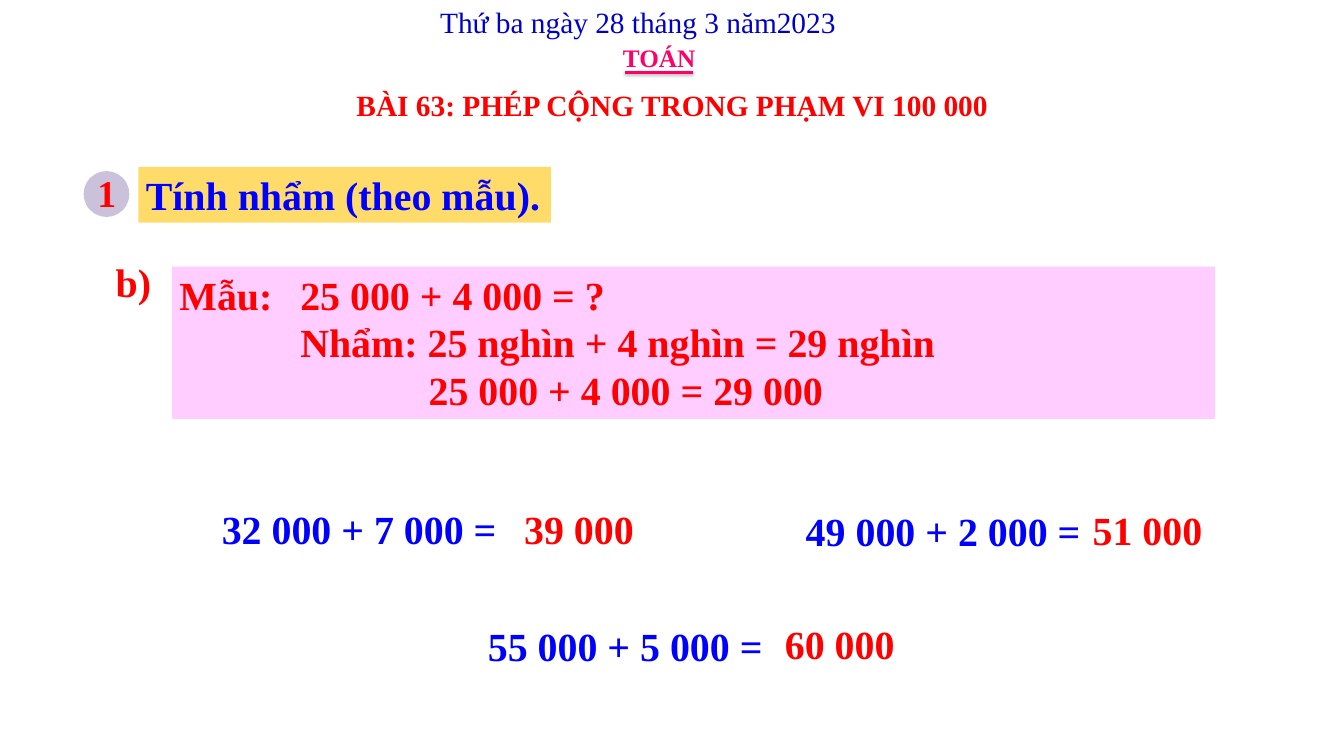
from lxml import etree
from pptx import Presentation
from pptx.dml.color import RGBColor
from pptx.enum.shapes import MSO_CONNECTOR, MSO_SHAPE
from pptx.enum.text import MSO_ANCHOR, MSO_AUTO_SIZE, PP_ALIGN
from pptx.oxml import parse_xml
from pptx.oxml.ns import nsdecls, qn
from pptx.util import Inches, Pt

# Content; places are left, top, width, height in percent of the slide
FONT = "Times New Roman"
RED, BLUE, NAVY, PINK = "FF0000", "0000FF", "0000CC", "FF0066"
LILAC, YELLOW, ROSE = "CCC1DA", "FFDB69", "FFCDFF"

TITLE = "BÀI 63: PHÉP CỘNG TRONG PHẠM VI 100 000"
EXAMPLE = [
    "Mẫu:\t25 000 + 4 000 = ?",
    "\tNhẩm: 25 nghìn + 4 nghìn = 29 nghìn",
    "\t\t25 000 + 4 000 = 29 000",
]
EXAMPLE_TABS = (1.6, 3.3)
# sum, its left and top, answer, its left, top and width
SUMS = [
    ("32 000 + 7 000 =", 15.95, 66.4, "39 000", 38.1, 66.1, 12.9),
    ("49 000 + 2 000 =", 59.4, 66.6, "51 000", 80.4, 66.2, 10.35),
    ("55 000 + 5 000 =", 35.75, 81.9, "60 000", 57.5, 81.3, 10.9),
]
SUM_W, SUM_H, ANSWER_H = 21.75, 7.4, 8
WIDE_INSET = (0.16, 0.08)

prs = Presentation()
prs.slide_width, prs.slide_height = Inches(17.8), Inches(10)
s = prs.slides.add_slide(prs.slide_layouts[5])


def rgb(color):
    return RGBColor.from_string(color)


def place(left, top, width, height):
    w, h = prs.slide_width / 100, prs.slide_height / 100
    return [int(v) for v in (left * w, top * h, width * w, height * h)]


def write(sp, lines, size, color, bold=True, wrap=False,
          inset=(0.1, 0.05), align=PP_ALIGN.LEFT, tabs=()):
    tf = sp.text_frame
    tf.word_wrap = wrap
    tf.auto_size = MSO_AUTO_SIZE.SHAPE_TO_FIT_TEXT
    tf.vertical_anchor = MSO_ANCHOR.TOP
    tf.margin_left = tf.margin_right = Inches(inset[0])
    tf.margin_top = tf.margin_bottom = Inches(inset[1])
    for i, line in enumerate(lines):
        p = tf.paragraphs[0] if i == 0 else tf.add_paragraph()
        p.alignment = align
        if tabs:
            stops = etree.SubElement(p._p.get_or_add_pPr(), qn("a:tabLst"))
            for pos in tabs:
                etree.SubElement(stops, qn("a:tab"), pos=str(Inches(pos)), algn="l")
        r = p.add_run()
        r.text = line
        r.font.name, r.font.size, r.font.bold = FONT, Pt(size), bold
        r.font.color.rgb = rgb(color)


def add_text(box, text, size, color, **style):
    write(s.shapes.add_textbox(*place(*box)), [text], size, color, **style)


def add_panel(kind, box, fill):
    sp = s.shapes.add_shape(kind, *place(*box))
    sp.shadow.inherit = False
    sp.fill.solid()
    sp.fill.fore_color.rgb = rgb(fill)
    sp.line.fill.background()
    return sp


# Header: date, subject with a shadowed underline, lesson title
add_text((32.2, 0, 30.8, 5.7), "Thứ ba ngày 28 tháng 3 năm2023", 28, NAVY, bold=False)
add_text((45.8, 5.1, 6.6, 5), "TOÁN", 24, PINK)

left, top, width, _ = place(46.5, 9.6, 5.1, 0)
rule = s.shapes.add_connector(MSO_CONNECTOR.STRAIGHT, left, top, left + width, top)
rule.line.color.rgb = rgb(PINK)
rule.line.width = Pt(2)
rule._element.spPr.append(parse_xml(
    f'<a:effectLst {nsdecls("a")}><a:outerShdw blurRad="{Pt(3.1)}" dist="{Pt(1.6)}" '
    'dir="5400000" rotWithShape="0"><a:srgbClr val="000000"><a:alpha val="38000"/>'
    '</a:srgbClr></a:outerShdw></a:effectLst>'))

title = s.shapes.title
title.left, title.top, title.width, title.height = place(23.55, 10.7, 52.9, 6.3)
write(title, [TITLE], 28, RED, wrap=True, inset=WIDE_INSET, align=PP_ALIGN.CENTER)

# Exercise number and heading
badge = add_panel(MSO_SHAPE.OVAL, (6.3, 22.8, 3.25, 5.8), LILAC)
badge.line.color.rgb = rgb(LILAC)
badge.line.width = Pt(2)
add_text((6.7, 22, 2.5, 7.1), "1", 36, RED)
heading = add_panel(MSO_SHAPE.RECTANGLE, (10.3, 22.1, 30.7, 7.4), YELLOW)
write(heading, ["Tính nhẩm (theo mẫu)."], 38, BLUE)

# Worked example
example = add_panel(MSO_SHAPE.RECTANGLE, (12.8, 35.3, 77.6, 20.2), ROSE)
write(example, EXAMPLE, 38, RED, wrap=True, tabs=EXAMPLE_TABS)
add_text((8.05, 33.6, 5.2, 7.4), "b)", 38, RED, wrap=True)

# Sums and their answers
for task, x, y, answer, ans_x, ans_y, ans_w in SUMS:
    add_text((x, y, SUM_W, SUM_H), task, 38, BLUE)
    add_text((ans_x, ans_y, ans_w, ANSWER_H), answer, 38, RED,
             wrap=True, inset=WIDE_INSET)

prs.save("out.pptx")
